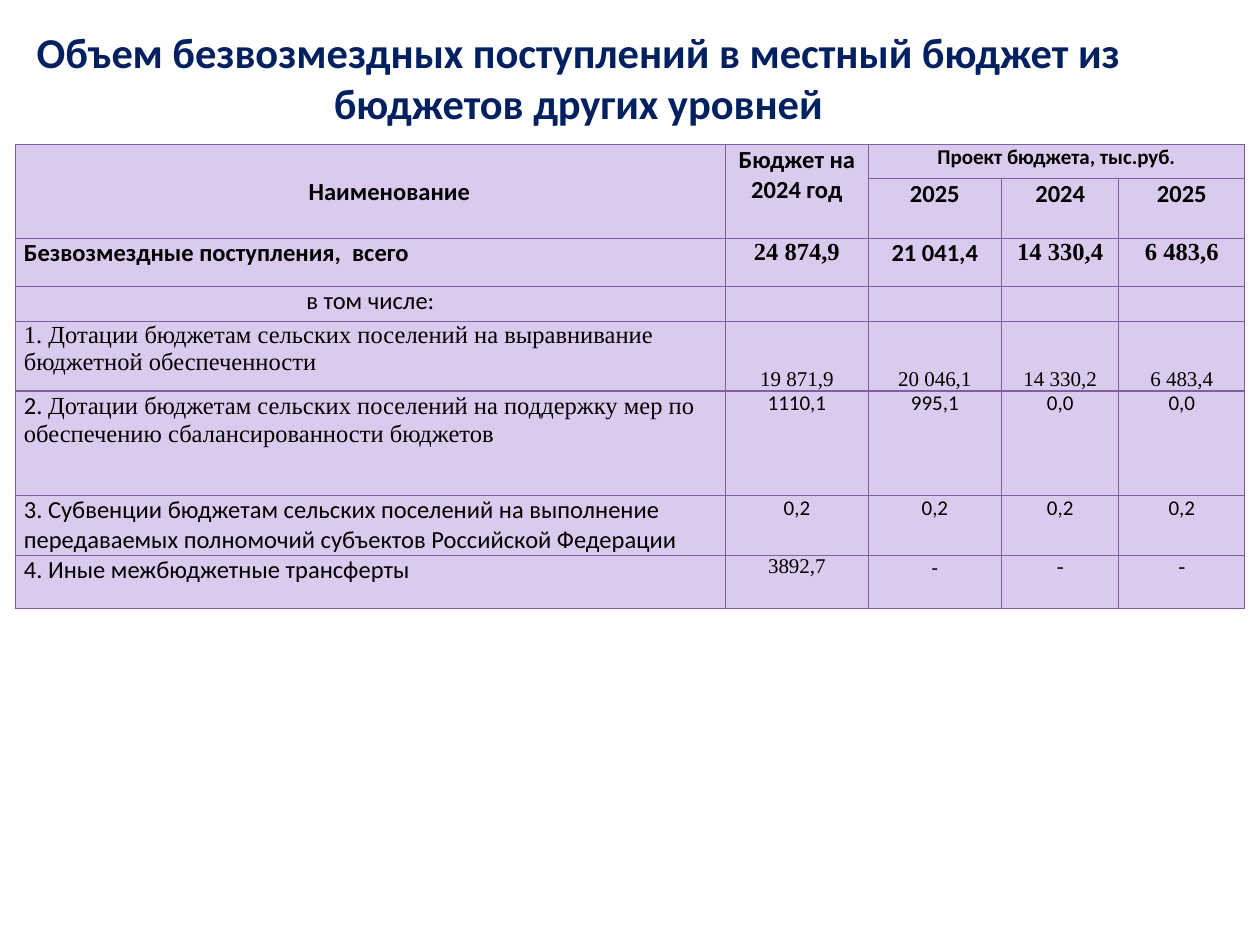
from lxml.etree import SubElement
from pptx import Presentation
from pptx.dml.color import RGBColor
from pptx.enum.text import MSO_ANCHOR as Anchor, MSO_AUTO_SIZE as AutoSize, PP_ALIGN as Align
from pptx.oxml.ns import qn
from pptx.util import Inches, Pt

SANS, SERIF = "Calibri", "Times New Roman"
NAVY, BLACK, LILAC, PURPLE = "002060", "000000", "DACAED", "7D60A0"
COLUMNS = [5.64, 1.13, 1.06, 0.93, 1]
ROWS = [0.27, 0.28, 0.38, 0.27, 0.55, 0.83, 0.42, 0.42]


def color(value):
    return RGBColor.from_string(value)


def add_text(paragraph, text, size=14, font=SANS, fill=BLACK, bold=False, align=Align.LEFT):
    paragraph.alignment = align
    run = paragraph.add_run()
    run.text = text
    run.font.size = Pt(size)
    run.font.name = font
    run.font.bold = bold
    run.font.color.rgb = color(fill)


def add_title(slide, left, top, width, height):
    title = slide.shapes.title
    title.left, title.top, title.width, title.height = map(Inches, (left, top, width, height))
    frame = title.text_frame
    frame.word_wrap = True
    frame.auto_size = AutoSize.NONE
    frame.vertical_anchor = Anchor.TOP
    frame.margin_top = frame.margin_bottom = 0
    add_text(frame.paragraphs[0],
             "Объем безвозмездных поступлений в местный бюджет из бюджетов других уровней",
             size=24.3, fill=NAVY, bold=True, align=Align.CENTER)


def format_cell(cell):
    cell.margin_left = cell.margin_right = Inches(0.07)
    cell.margin_top = cell.margin_bottom = 0
    properties = cell._tc.get_or_add_tcPr()
    for side in ("lnL", "lnR", "lnT", "lnB"):
        line = SubElement(properties, qn(f"a:{side}"), w=str(Pt(0.75)))
        SubElement(SubElement(line, qn("a:solidFill")), qn("a:srgbClr"), val=PURPLE)
    cell.fill.solid()
    cell.fill.fore_color.rgb = color(LILAC)


def fill_row(table, row, label, values, fonts, size=12, bold=False, label_font=SANS,
             label_align=Align.LEFT, anchor=Anchor.TOP):
    add_text(table.cell(row, 0).text_frame.paragraphs[0], label,
             font=label_font, bold=bold, align=label_align)
    for column, (value, font) in enumerate(zip(values, fonts), 1):
        cell = table.cell(row, column)
        cell.vertical_anchor = anchor
        add_text(cell.text_frame.paragraphs[0], value, size=size, font=font,
                 bold=bold, align=Align.CENTER)


def add_header(table):
    table.cell(0, 0).merge(table.cell(1, 0))
    table.cell(0, 1).merge(table.cell(1, 1))
    table.cell(0, 2).merge(table.cell(0, 4))
    headings = [(0, 0, "Наименование", 14), (0, 1, "Бюджет на 2024 год", 14),
                (0, 2, "Проект бюджета, тыс.руб.", 12),
                (1, 2, "2025", 14), (1, 3, "2024", 14), (1, 4, "2025", 14)]
    for row, column, text, size in headings:
        add_text(table.cell(row, column).text_frame.paragraphs[0], text,
                 size=size, bold=True, align=Align.CENTER)
    name = table.cell(0, 0)
    name.vertical_anchor = Anchor.MIDDLE
    name.text_frame.paragraphs[0]._p.get_or_add_pPr().set("indent", str(Inches(0.3)))


def add_budget_table(slide, left, top, width, height):
    frame = slide.shapes.add_table(len(ROWS), len(COLUMNS),
                                   *map(Inches, (left, top, width, height)))
    table = frame.table
    table.first_row = table.horz_banding = False
    for column, size in zip(table.columns, COLUMNS):
        column.width = Inches(size)
    for row, size in zip(table.rows, ROWS):
        row.height = Inches(size)
    for cell in table.iter_cells():
        format_cell(cell)
    add_header(table)

    # Totals
    fill_row(table, 2, "Безвозмездные поступления,  всего",
             ["24 874,9", "21 041,4", "14 330,4", "6 483,6"],
             [SERIF, SANS, SERIF, SERIF], size=14, bold=True)
    fill_row(table, 3, "в том числе:", [""] * 4, [SANS] * 4, label_align=Align.CENTER)

    # Kinds of transfer
    fill_row(table, 4, "1. Дотации бюджетам сельских поселений на выравнивание "
             "бюджетной обеспеченности",
             ["19 871,9", "20 046,1", "14 330,2", "6 483,4"], [SERIF] * 4,
             label_font=SERIF, anchor=Anchor.BOTTOM)
    fill_row(table, 5, "2. ", ["1110,1", "995,1", "0,0", "0,0"], [SANS] * 4)
    add_text(table.cell(5, 0).text_frame.paragraphs[0],
             "Дотации бюджетам сельских поселений на поддержку мер по обеспечению "
             "сбалансированности бюджетов", font=SERIF)
    fill_row(table, 6, "3. Субвенции бюджетам сельских поселений на выполнение "
             "передаваемых полномочий субъектов Российской Федерации",
             ["0,2"] * 4, [SANS] * 4)
    fill_row(table, 7, "4. Иные межбюджетные трансферты", ["3892,7", "-", "-", "-"],
             [SERIF, SANS, SERIF, SERIF], label_align=Align.JUSTIFY)


def main():
    presentation = Presentation()
    presentation.slide_width, presentation.slide_height = Inches(10), Inches(7.5)
    slide = presentation.slides.add_slide(presentation.slide_layouts[5])
    add_title(slide, 0.09, 0.21, 9, 1.01)
    add_budget_table(slide, 0.12, 1.15, sum(COLUMNS), sum(ROWS))
    presentation.save("out.pptx")


if __name__ == "__main__":
    main()
